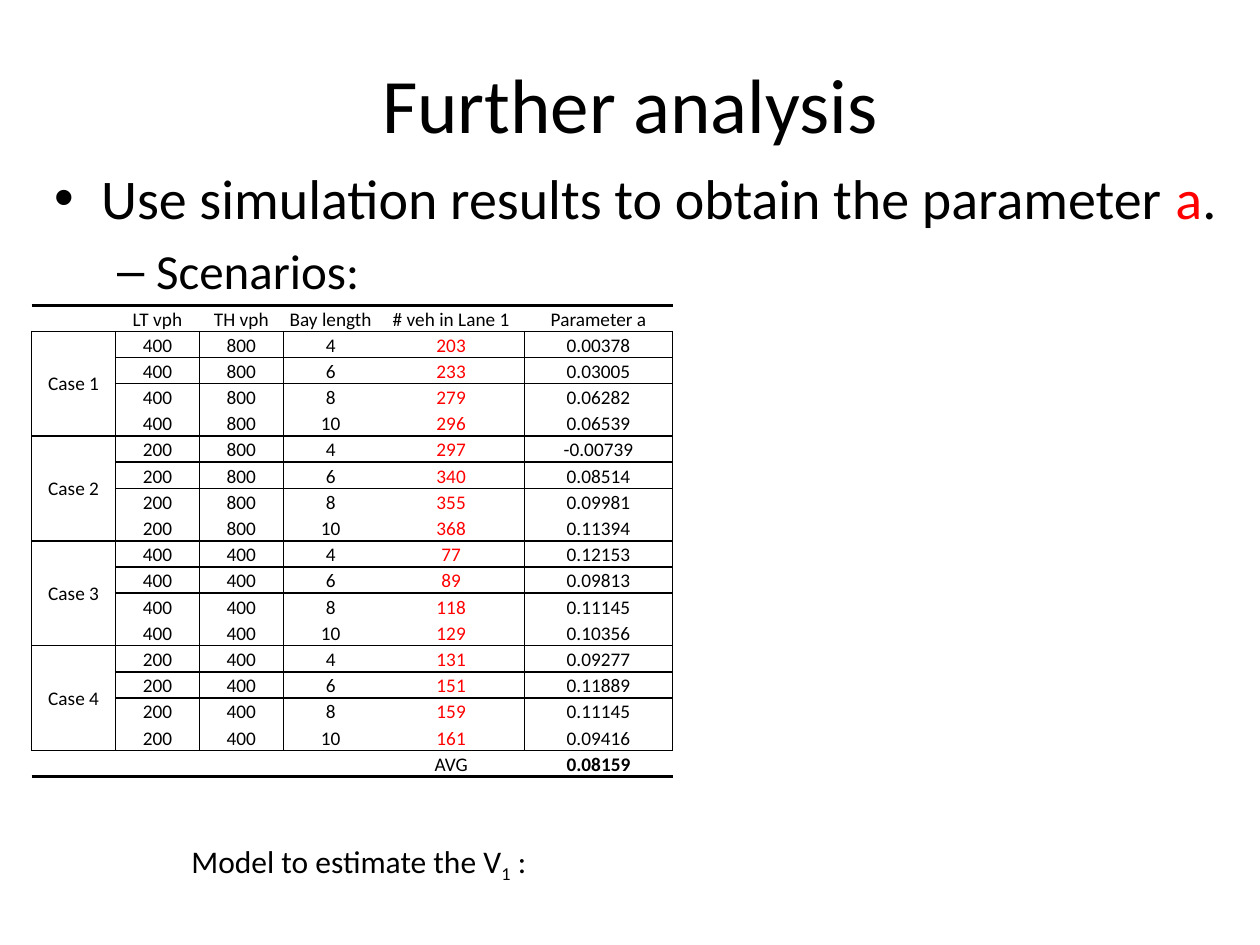
from typing import NamedTuple

from lxml import etree
from pptx import Presentation
from pptx import util as u
from pptx.dml.color import RGBColor
from pptx.enum import text
from pptx.oxml import ns

BLACK = RGBColor(0x00, 0x00, 0x00)
RED = RGBColor(0xFF, 0x00, 0x00)
WHITE = RGBColor(0xFF, 0xFF, 0xFF)
FONT = "Calibri"
NO_GRID_STYLE = "{2D5ABB26-0587-4C30-8999-92F81FD0307C}"


class Case(NamedTuple):
    left_turn: int
    through: int
    vehicles: tuple[int, ...]
    parameters: tuple[str, ...]


class Bullet(NamedTuple):
    mark: str
    level: int
    size: int
    margin: float
    hanging: float
    runs: tuple[tuple[str, RGBColor], ...]


HEADERS = ("", "LT vph", "TH vph", "Bay length", "# veh in Lane 1", "Parameter a")
FOOTER = ("", "", "", "", "AVG", "0.08159")
BAYS = (4, 6, 8, 10)
CASES = (
    Case(400, 800, (203, 233, 279, 296), ("0.00378", "0.03005", "0.06282", "0.06539")),
    Case(200, 800, (297, 340, 355, 368), ("-0.00739", "0.08514", "0.09981", "0.11394")),
    Case(400, 400, (77, 89, 118, 129), ("0.12153", "0.09813", "0.11145", "0.10356")),
    Case(200, 400, (131, 151, 159, 161), ("0.09277", "0.11889", "0.11145", "0.09416")),
)
BULLETS = (
    Bullet("•", 0, 32, 0.95, 0.95, (
        ("Use simulation results to obtain the parameter ", BLACK), ("a", RED), (".", BLACK))),
    Bullet("–", 1, 28, 2.06, 0.79, (("Scenarios:", BLACK),)),
)
COLUMNS = (1.69, 1.69, 1.69, 1.91, 2.95, 2.99)
TABLE_HEIGHT = 9.52
RULED_COLUMNS = (0, 1, 2, 5, 6)
THIN, THICK = 1, 2


def add_run(p, content: str, size: int, color: RGBColor = BLACK, bold: bool = False):
    r = p.add_run()
    r.text = content
    for name, value in dict(name=FONT, size=u.Pt(size), bold=bold).items():
        setattr(r.font, name, value)
    r.font.color.rgb = color
    return r


def add_text_box(slide, left: float, top: float, width: float, height: float, wrap: bool):
    tf = slide.shapes.add_textbox(u.Cm(left), u.Cm(top), u.Cm(width), u.Cm(height)).text_frame
    tf.word_wrap = wrap
    return tf


def add_bullet(p, bullet: Bullet) -> None:
    p.level = bullet.level
    p.space_before = u.Pt(bullet.size * 0.2)
    for content, color in bullet.runs:
        add_run(p, content, bullet.size, color)
    pPr = p._p.get_or_add_pPr()
    pPr.set("marL", str(u.Cm(bullet.margin)))
    pPr.set("indent", str(-u.Cm(bullet.hanging)))
    etree.SubElement(pPr, ns.qn("a:buFont"), typeface="Arial")
    etree.SubElement(pPr, ns.qn("a:buChar"), char=bullet.mark)


def row_rule(edge: int, col: int, last: int) -> int:
    """Width of the horizontal rule at a row edge, 0 for none."""
    if edge in (0, last):
        return THICK
    step = (edge - 1) % len(BAYS)
    return THIN if step == 0 or (step == 1 and col > 0) else 0


def set_borders(cell, row: int, col: int, last: int) -> None:
    in_case = 0 < row < last - 1
    bottom = row + len(BAYS) if cell.is_merge_origin else row + 1
    widths = {
        "L": THIN if in_case and col in RULED_COLUMNS else 0,
        "R": THIN if in_case and col + 1 in RULED_COLUMNS else 0,
        "T": row_rule(row, col, last),
        "B": row_rule(bottom, col, last),
    }
    tcPr = cell._tc.get_or_add_tcPr()
    for side, width in widths.items():
        if width:
            ln = etree.SubElement(tcPr, ns.qn(f"a:ln{side}"), w=str(u.Pt(width)))
            fill = etree.SubElement(ln, ns.qn("a:solidFill"))
            etree.SubElement(fill, ns.qn("a:srgbClr"), val=str(BLACK))


def table_rows() -> list[tuple]:
    rows = [HEADERS]
    for number, case in enumerate(CASES, 1):
        for i, (bay, vehicles, parameter) in enumerate(zip(BAYS, case.vehicles, case.parameters)):
            label = f"Case {number}" if i == 0 else ""
            rows.append((label, case.left_turn, case.through, bay, vehicles, parameter))
    return rows + [FOOTER]


def fill_cell(cell, value, row: int, col: int, last: int) -> None:
    anchor = text.MSO_ANCHOR.MIDDLE if cell.is_merge_origin else text.MSO_ANCHOR.BOTTOM
    margin = u.Cm(0.02)
    for name, setting in dict(vertical_anchor=anchor, margin_left=margin, margin_right=margin,
                              margin_top=margin, margin_bottom=0).items():
        setattr(cell, name, setting)
    set_borders(cell, row, col, last)
    cell.fill.solid()
    cell.fill.fore_color.rgb = WHITE
    p = cell.text_frame.paragraphs[0]
    p.alignment = text.PP_ALIGN.CENTER
    if value == "":
        etree.SubElement(p._p, ns.qn("a:endParaRPr"), sz="1100")
        return
    color = RED if col == 4 and 0 < row < last - 1 else BLACK
    add_run(p, str(value), 11, color, bold=row == last - 1 and col == 5)


def add_scenario_table(slide) -> None:
    rows = table_rows()
    last = len(rows)
    frame = slide.shapes.add_table(last, len(COLUMNS), u.Cm(0.64), u.Cm(6.15),
                                   u.Cm(sum(COLUMNS)), u.Cm(TABLE_HEIGHT))
    table = frame.table
    table.first_row = table.horz_banding = False
    table._tbl.tblPr.find(ns.qn("a:tableStyleId")).text = NO_GRID_STYLE
    for column, width in zip(table.columns, COLUMNS):
        column.width = u.Cm(width)
    for row in table.rows:
        row.height = u.Cm(TABLE_HEIGHT / last)
    for start in range(1, last - 1, len(BAYS)):
        table.cell(start, 0).merge(table.cell(start + len(BAYS) - 1, 0))
    for i, values in enumerate(rows):
        for j, value in enumerate(values):
            fill_cell(table.cell(i, j), value, i, j, last)


def main() -> None:
    prs = Presentation()
    prs.slide_width, prs.slide_height = u.Cm(25.4), u.Cm(19.05)
    slide = prs.slides.add_slide(prs.slide_layouts[5])

    title = slide.shapes.title
    for name, value in dict(left=1.27, top=0.76, width=22.86, height=2.62).items():
        setattr(title, name, u.Cm(value))
    title.text_frame.vertical_anchor = text.MSO_ANCHOR.MIDDLE
    p = title.text_frame.paragraphs[0]
    p.alignment = text.PP_ALIGN.CENTER
    add_run(p, "Further analysis", 44)

    tf = add_text_box(slide, 0.84, 3.18, 24.13, 15.67, wrap=True)
    for i, bullet in enumerate(BULLETS):
        add_bullet(tf.add_paragraph() if i else tf.paragraphs[0], bullet)

    add_scenario_table(slide)

    tf = add_text_box(slide, 3.61, 16.84, 7.49, 1.02, wrap=False)
    tf.auto_size = text.MSO_AUTO_SIZE.SHAPE_TO_FIT_TEXT
    p = tf.paragraphs[0]
    add_run(p, "Model to estimate the V", 18)
    subscript = add_run(p, "1", 18)
    subscript.font._element.set("baseline", "-25000")
    add_run(p, " :", 18)

    prs.save("out.pptx")


if __name__ == "__main__":
    main()
